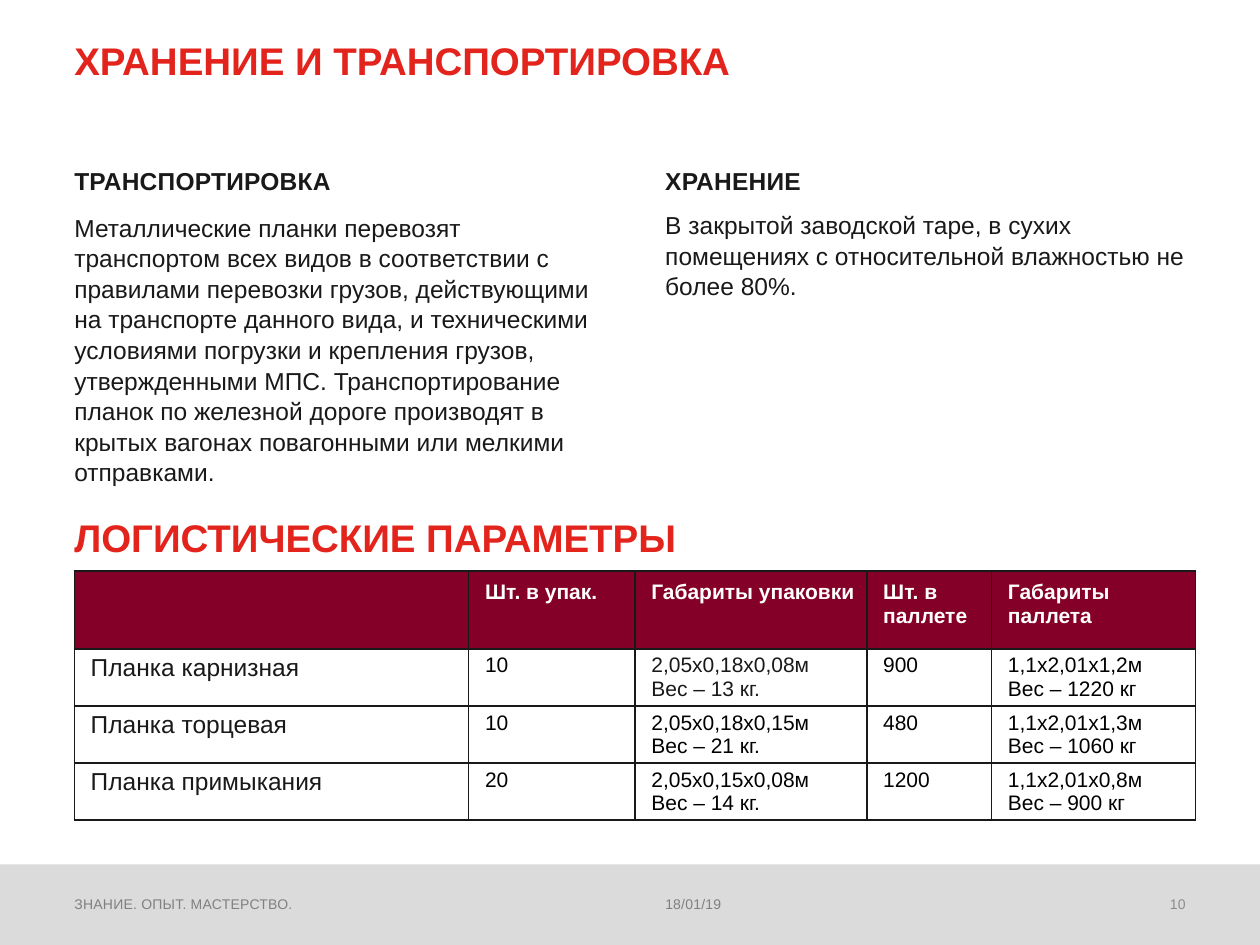
import pptx
import pptx.util
import pptx.dml.color
import pptx.enum.shapes
import pptx.enum.text
import pptx.oxml
import pptx.oxml.ns

Inches = pptx.util.Inches
Pt = pptx.util.Pt
Align = pptx.enum.text.PP_ALIGN
Anchor = pptx.enum.text.MSO_ANCHOR

COLORS = {"red": "E2241C", "ink": "191919", "black": "000000", "white": "FFFFFF",
          "wine": "850028", "band": "DBDBDB", "gray": "808080", "page": "8C8C8C"}
LEFT, RIGHT, COLUMN = 0.59, 5.28, 4.13


def style(para, size, color, bold=False, spacing=0):
    for span in para.runs:
        span.font.name = "Arial"
        span.font.size = Pt(size)
        span.font.bold = bold
        span.font.color.rgb = pptx.dml.color.RGBColor.from_string(COLORS[color])
        if spacing:
            span.font._element.set("spc", str(spacing))


def add_text(text, place, size, color, bold=False, spacing=0, leading=None,
             align=Align.LEFT, anchor=Anchor.TOP):
    frame = page.shapes.add_textbox(*map(Inches, place)).text_frame
    frame.word_wrap = True
    frame.margin_left = frame.margin_right = frame.margin_top = frame.margin_bottom = 0
    frame.vertical_anchor = anchor
    frame.text = text
    para = frame.paragraphs[0]
    para.alignment = align
    if leading:
        para.line_spacing = leading
    style(para, size, color, bold, spacing)


deck = pptx.Presentation()
deck.slide_width, deck.slide_height = Inches(10), Inches(7.5)
page = deck.slides.add_slide(deck.slide_layouts[6])

widths = [3.13, 1.32, 1.84, 0.99, 1.62]
heights = [0.62, 0.45, 0.45, 0.45]
rows = [
    ["", "Шт. в упак.", "Габариты упаковки", "Шт. в паллете", "Габариты паллета"],
    ["Планка карнизная", "10", "2,05х0,18х0,08м\nВес – 13 кг.", "900", "1,1х2,01х1,2м\nВес – 1220 кг"],
    ["Планка торцевая", "10", "2,05х0,18х0,15м\nВес – 21 кг.", "480", "1,1х2,01х1,3м\nВес – 1060 кг"],
    ["Планка примыкания", "20", "2,05х0,15х0,08м\nВес – 14 кг.", "1200", "1,1х2,01х0,8м\nВес – 900 кг"],
]
table = page.shapes.add_table(len(rows), len(widths), Inches(LEFT), Inches(4.53),
                              Inches(sum(widths)), Inches(sum(heights))).table
for column, width in zip(table.columns, widths):
    column.width = Inches(width)
for row, height in zip(table.rows, heights):
    row.height = Inches(height)

for r, values in enumerate(rows):
    for c, value in enumerate(values):
        cell = table.cell(r, c)
        cell.text = value
        cell.margin_left, cell.margin_right = Inches(0.13), 0
        cell.margin_top = cell.margin_bottom = Inches(0.04 if r else 0.08)
        properties = cell._tc.get_or_add_tcPr()
        for side in ("lnL", "lnR", "lnT", "lnB"):
            properties.append(pptx.oxml.parse_xml(
                f'<a:{side} {pptx.oxml.ns.nsdecls("a")} w="12700"><a:solidFill>'
                f'<a:srgbClr val="{COLORS["ink"]}"/></a:solidFill></a:{side}>'))
        if r == 0:
            cell.fill.solid()
            cell.fill.fore_color.rgb = pptx.dml.color.RGBColor.from_string(COLORS["wine"])
            size, color = 12, "white"
        else:
            cell.fill.background()
            size = 12 if c else 14
            color = "ink" if c == 0 or (r, c) == (1, 2) else "black"
        for para in cell.text_frame.paragraphs:
            style(para, size, color, bold=r == 0)

footer = page.shapes.add_shape(pptx.enum.shapes.MSO_SHAPE.RECTANGLE,
                               0, Inches(6.86), deck.slide_width, Inches(0.65))
footer.shadow.inherit = False
footer.fill.solid()
footer.fill.fore_color.rgb = pptx.dml.color.RGBColor.from_string(COLORS["band"])
footer.line.fill.background()

for heading, top in [("ХРАНЕНИЕ И ТРАНСПОРТИРОВКА", 0.29), ("ЛОГИСТИЧЕСКИЕ ПАРАМЕТРЫ", 4.08)]:
    add_text(heading, (LEFT, top, 6.89, 0.65), 22, "red", bold=True)

sections = [
    (LEFT, 0.37, "ТРАНСПОРТИРОВКА",
     "Металлические планки перевозят транспортом всех видов в соответствии с правилами "
     "перевозки грузов, действующими на транспорте данного вида, и техническими условиями "
     "погрузки и крепления грузов, утвержденными МПС. Транспортирование планок по железной "
     "дороге производят в крытых вагонах повагонными или мелкими отправками."),
    (RIGHT, 0.35, "ХРАНЕНИЕ",
     "В закрытой заводской таре, в сухих помещениях с относительной влажностью не более 80%."),
]
for left, height, heading, body in sections:
    add_text(heading, (left, 1.31, COLUMN, height), 14, "ink", bold=True, spacing=10, leading=1.04)
    add_text(body, (left, 1.31 + height, COLUMN, 5.24), 14, "ink", leading=1.04)

for text, left, width, color, align in [
    ("18/01/19", RIGHT, 3.31, "gray", Align.LEFT),
    ("ЗНАНИЕ. ОПЫТ. МАСТЕРСТВО.", LEFT, 4.15, "gray", Align.LEFT),
    ("10", 8.86, 0.55, "page", Align.RIGHT),
]:
    add_text(text, (left, 7, width, 0.24), 8, color, spacing=10, align=align, anchor=Anchor.BOTTOM)

deck.save("out.pptx")
